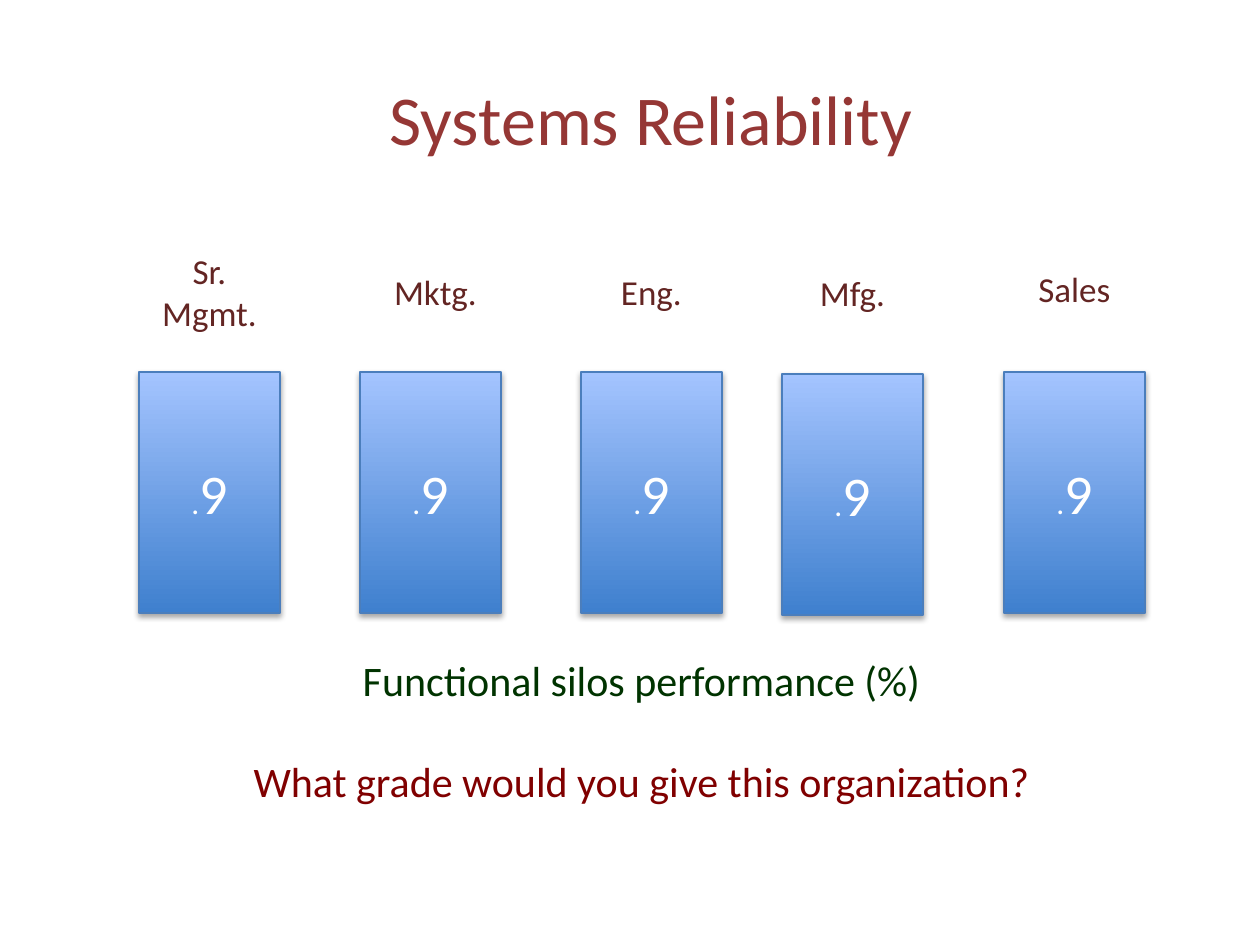
from lxml import etree
from pptx import Presentation
from pptx.dml.color import RGBColor
from pptx.enum.shapes import MSO_SHAPE
from pptx.enum.text import MSO_ANCHOR, PP_ALIGN
from pptx.oxml.ns import qn
from pptx.util import Pt

PX = 914400 // 126
RECT = MSO_SHAPE.RECTANGLE
MIDDLE, TOP = MSO_ANCHOR.MIDDLE, MSO_ANCHOR.TOP
CENTER = PP_ALIGN.CENTER
FONT = "Calibri"
COLORS = {
    "title": "953735", "label": "632523", "caption": "003300",
    "question": "800000", "value": "FFFFFF", "line": "4B7EBC",
    "bar_bottom": "3F80CE", "bar_top": "A4C4FF", "shadow": "000000",
}

TITLE = "Systems Reliability"
# name, left of bar, top of bar, left of label, top of label
SILOS = [
    ("Sr. Mgmt.", 139, 372, 139, 213),
    ("Mktg.", 360, 372, 365, 213),
    ("Eng.", 581, 372, 581, 213),
    ("Mfg.", 782, 374, 782, 214),
    ("Sales", 1004, 372, 1004, 210),
]
VALUE = [(".", 18), ("9", 32)]
CLOSING = [("Functional silos performance (%)", "caption"),
           ("What grade would you give this organization?", "question")]
BAR_W, BAR_H, LABEL_H = 141, 241, 157


def rgb(name):
    return RGBColor.from_string(COLORS[name])


def style(p, size, color):
    p.alignment = CENTER
    p.font.name = FONT
    p.font.size = Pt(size)
    p.font.color.rgb = rgb(color)


def add_text(s, box, lines, size, anchor=MIDDLE, gap=0):
    tf = s.shapes.add_textbox(*(v * PX for v in box)).text_frame
    tf.word_wrap = True
    tf.vertical_anchor = anchor
    for i, (text, color) in enumerate(lines):
        p = tf.add_paragraph() if i else tf.paragraphs[0]
        p.text = text
        style(p, size, color)
        if i:
            p.space_before = Pt(gap)


def add_shadow(sp):
    sp.shadow.inherit = False
    effects = sp._element.spPr.find(qn("a:effectLst"))
    shadow = etree.SubElement(effects, qn("a:outerShdw"), blurRad="40000",
                              dist="23000", dir="5400000", rotWithShape="0")
    color = etree.SubElement(shadow, qn("a:srgbClr"), val=COLORS["shadow"])
    etree.SubElement(color, qn("a:alpha"), val="35000")


def add_bar(s, left, top):
    sp = s.shapes.add_shape(RECT, left * PX, top * PX, BAR_W * PX, BAR_H * PX)
    sp.fill.gradient()
    sp.fill.gradient_angle = 90
    for stop, color, position in zip(sp.fill.gradient_stops,
                                     ("bar_bottom", "bar_top"), (0, 1)):
        stop.color.rgb = rgb(color)
        stop.position = position
    sp.line.color.rgb = rgb("line")
    sp.line.width = Pt(0.75)
    add_shadow(sp)
    tf = sp.text_frame
    tf.vertical_anchor = MIDDLE
    p = tf.paragraphs[0]
    style(p, 32, "value")
    for text, size in VALUE:
        r = p.add_run()
        r.text = text
        r.font.size = Pt(size)


def main():
    prs = Presentation()
    prs.slide_width, prs.slide_height = 1260 * PX, 945 * PX
    s = prs.slides.add_slide(prs.slide_layouts[6])
    for _, left, top, _, _ in SILOS:
        add_bar(s, left, top)
    add_text(s, (84, 39, 1134, 157), [(TITLE, "title")], 40)
    for name, _, _, left, top in SILOS:
        add_text(s, (left, top, BAR_W, LABEL_H), [(name, "label")], 20)
    add_text(s, (139, 648, 1005, 165), CLOSING, 24, TOP, 29)
    prs.save("out.pptx")


if __name__ == "__main__":
    main()
